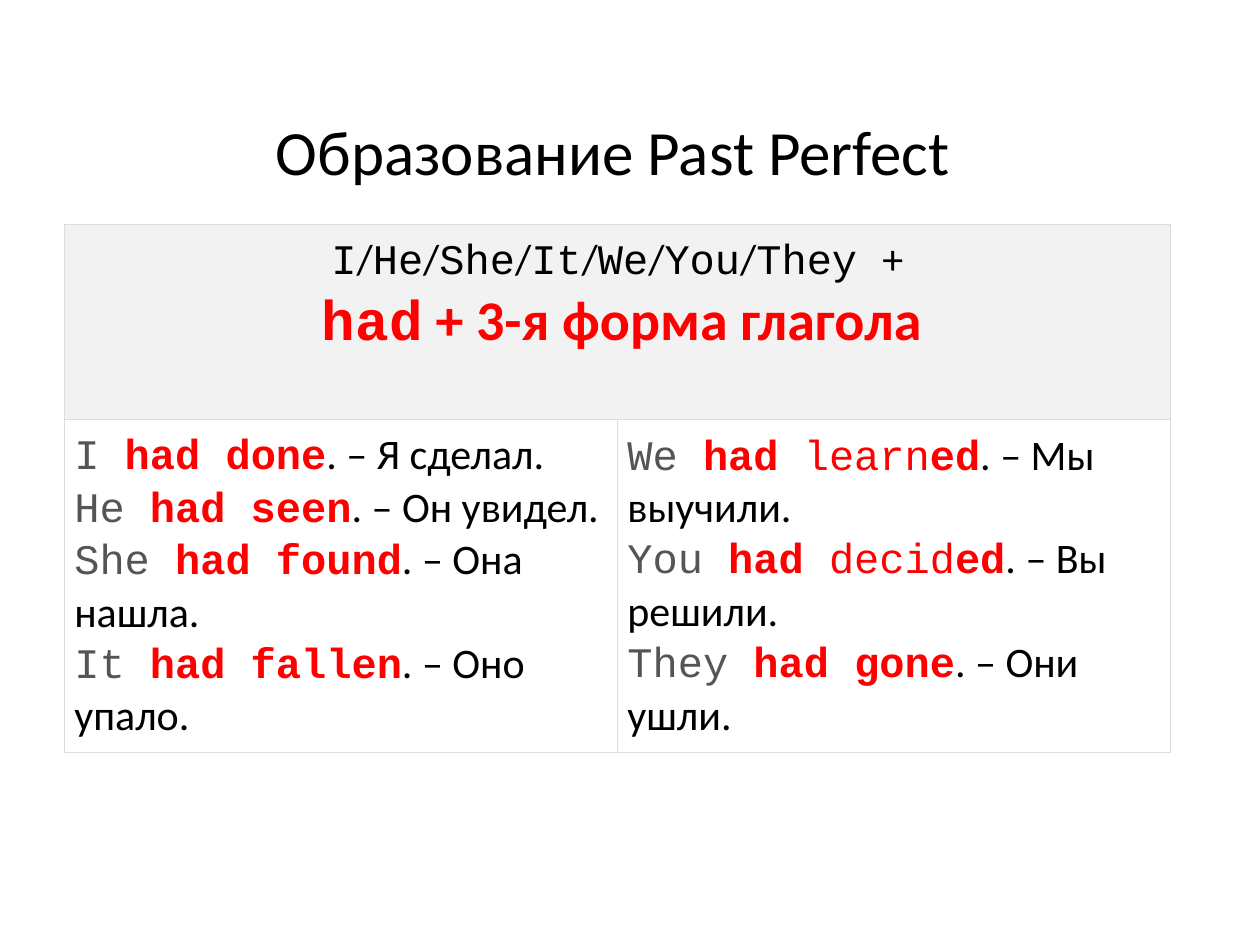
from lxml.etree import SubElement as Sub
from pptx import Presentation
from pptx.dml.color import RGBColor
from pptx.enum.text import MSO_ANCHOR as Anchor, PP_ALIGN as Align
from pptx.oxml.ns import qn
from pptx.util import Inches, Pt

MONO, SANS = "Courier New", "Calibri"
BLACK, GREY, RED = "000000", "555555", "FF0000"


def color(code):
    return RGBColor.from_string(code)


def write(para, text, font=SANS, size=24, ink=BLACK, bold=False):
    run = para.add_run()
    run.text = text
    run.font.name, run.font.size, run.font.bold = font, Pt(size), bold
    run.font.color.rgb = color(ink)


deck = Presentation()
deck.slide_width, deck.slide_height = Inches(10), Inches(7.5)
slide = deck.slides.add_slide(deck.slide_layouts[5])

# Title
title = slide.shapes.title
title.left, title.top = Inches(2.09), Inches(0.84)
title.width, title.height = Inches(6.82), Inches(0.71)
title.text_frame.vertical_anchor = Anchor.TOP
head = title.text_frame.paragraphs[0]
head.alignment = Align.LEFT
write(head, "Образование Past Perfect", size=36)

# Table grid: one wide header over two equal columns
rows = [1.55, 2.64]
frame = slide.shapes.add_table(2, 2, Inches(0.51), Inches(1.78),
                               Inches(8.78), Inches(sum(rows)))
table = frame.table
table.first_row = table.horz_banding = False
for row, high in zip(table.rows, rows):
    row.height = Inches(high)
for col in table.columns:
    col.width = Inches(4.39)

# Borders, margins and fills
for i, row in enumerate(table.rows):
    for cell in row.cells:
        cell.margin_left = cell.margin_right = Inches(0.08)
        cell.margin_top = cell.margin_bottom = Inches(0.08)
        cell.vertical_anchor = Anchor.MIDDLE if i else Anchor.TOP
        props = cell._tc.get_or_add_tcPr()
        for side in "LRTB":
            line = Sub(props, qn(f"a:ln{side}"), w=str(Pt(0.75)))
            Sub(Sub(line, qn("a:solidFill")), qn("a:srgbClr"), val="DDDDDD")
        cell.fill.solid()
        cell.fill.fore_color.rgb = color("FFFFFF" if i else "F2F2F2")
top = table.cell(0, 0)
top.merge(table.cell(0, 1))

# Header: pronouns, then the rule
para = top.text_frame.paragraphs[0]
para.alignment = Align.CENTER
for n, word in enumerate(["I", "He", "She", "It", "We", "You", "They "]):
    if n:
        write(para, "/")
    write(para, word, font=MONO)
write(para, "+")
para = top.text_frame.add_paragraph()
para.alignment = Align.CENTER
write(para, " ")
write(para, "had", font=MONO, size=32, ink=RED, bold=True)
write(para, " + 3-я форма глагола", size=32, ink=RED, bold=True)

# Examples: subject, verb parts (bold and plain in turn), translation
cases = [
    [("I", ["had done"], "Я сделал"),
     ("He", ["had seen"], "Он увидел"),
     ("She", ["had found"], "Она нашла"),
     ("It", ["had fallen"], "Оно упало")],
    [("We", ["had", " learn", "ed"], "Мы выучили"),
     ("You", ["had", " decid", "ed"], "Вы решили"),
     ("They", ["had gone"], "Они ушли")],
]
for c, group in enumerate(cases):
    text = table.cell(1, c).text_frame
    for n, (who, verb, sense) in enumerate(group):
        para = text.add_paragraph() if n else text.paragraphs[0]
        write(para, f"{who} ", font=MONO, ink=GREY)
        for k, part in enumerate(verb):
            write(para, part, font=MONO, ink=RED, bold=k % 2 == 0)
        write(para, f". – {sense}.")

deck.save("out.pptx")
